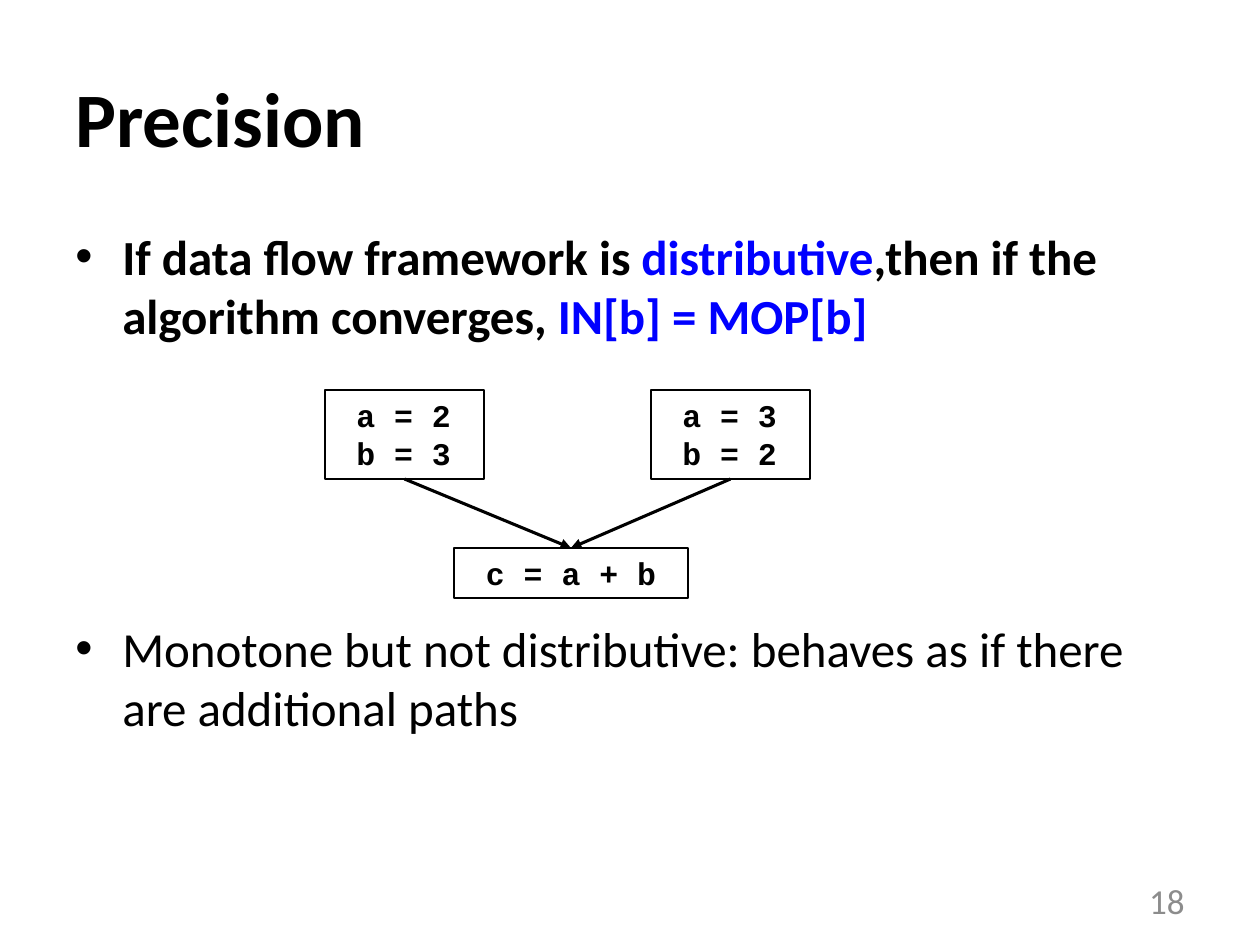
from dataclasses import dataclass

import lxml.etree
import pptx
import pptx.dml.color
import pptx.enum.shapes
import pptx.enum.text
import pptx.oxml.ns
import pptx.util

EMU_PER_PX = 914400 / 126
ALIGN = pptx.enum.text.PP_ALIGN
ANCHOR = pptx.enum.text.MSO_ANCHOR
BOTTOM, TOP = 2, 0


def rgb(code: str):
    return pptx.dml.color.RGBColor.from_string(code)


def px(length: int) -> pptx.util.Emu:
    return pptx.util.Emu(round(length * EMU_PER_PX))


@dataclass(frozen=True)
class Theme:
    text_font: str = "Calibri"
    code_font: str = "Courier New"
    ink: str = "000000"
    accent: str = "0000FF"
    muted: str = "8C8C8C"
    title_size: int = 44
    body_size: int = 28
    number_size: int = 20
    code_size: int = 18
    box_line: float = 1
    arrow_line: float = 1.75


THEME = Theme()


@dataclass(frozen=True)
class Area:
    left: int
    top: int
    width: int
    height: int

    def emu(self) -> list:
        return [px(n) for n in (self.left, self.top, self.width, self.height)]


@dataclass(frozen=True)
class Bullet:
    pieces: tuple  # (text, colour) pairs
    bold: bool
    space_before: int = 0


@dataclass(frozen=True)
class CodeBlock:
    area: Area
    lines: tuple
    align: ALIGN = ALIGN.LEFT


TITLE_AREA = Area(63, 38, 1134, 157)
BODY_AREA = Area(63, 220, 1134, 624)
NUMBER_AREA = Area(903, 876, 294, 50)
HANGING_INDENT = 47

BULLETS = (
    Bullet((("If data flow framework is ", THEME.ink),
            ("distributive", THEME.accent),
            (",then if the algorithm converges, ", THEME.ink),
            ("IN[b] = MOP[b]", THEME.accent)), bold=True),
    # The gap leaves room for the flow graph between the two bullets.
    Bullet((("Monotone but not distributive: behaves as if there "
             "are additional paths", THEME.ink),),
           bold=False, space_before=157),
)

BRANCHES = (
    CodeBlock(Area(325, 390, 159, 89), (" a = 2", " b = 3")),
    CodeBlock(Area(651, 390, 159, 89), (" a = 3", " b = 2")),
)
JOIN = CodeBlock(Area(454, 548, 234, 50), (" c = a + b ",), ALIGN.CENTER)


def style(font, name: str, size: int, color: str, bold: bool = False) -> None:
    font.name, font.size, font.bold = name, pptx.util.Pt(size), bold
    font.color.rgb = rgb(color)


def add_text_frame(slide, area: Area, anchor: ANCHOR):
    frame = slide.shapes.add_textbox(*area.emu()).text_frame
    frame.word_wrap = True
    frame.vertical_anchor = anchor
    return frame


def add_label(slide, area: Area, text: str, size: int, color: str,
              bold: bool = False, align: ALIGN = ALIGN.LEFT) -> None:
    label = add_text_frame(slide, area, ANCHOR.MIDDLE).paragraphs[0]
    label.text = text
    label.alignment = align
    style(label.font, THEME.text_font, size, color, bold)


def add_bullet_mark(paragraph) -> None:
    properties = paragraph._p.get_or_add_pPr()
    properties.set("marL", str(px(HANGING_INDENT)))
    properties.set("indent", str(-px(HANGING_INDENT)))
    ns = pptx.oxml.ns.qn
    lxml.etree.SubElement(properties, ns("a:buFont")).set("typeface", "Arial")
    lxml.etree.SubElement(properties, ns("a:buChar")).set("char", "•")


def add_bullets(slide, area: Area, bullets: tuple) -> None:
    frame = add_text_frame(slide, area, ANCHOR.TOP)
    for index, bullet in enumerate(bullets):
        paragraph = frame.add_paragraph() if index else frame.paragraphs[0]
        paragraph.space_before = pptx.util.Pt(bullet.space_before)
        add_bullet_mark(paragraph)
        for text, color in bullet.pieces:
            run = paragraph.add_run()
            run.text = text
            style(run.font, THEME.text_font, THEME.body_size, color, bullet.bold)


def add_code_block(slide, block: CodeBlock):
    box = slide.shapes.add_shape(
        pptx.enum.shapes.MSO_SHAPE.RECTANGLE, *block.area.emu())
    box.shadow.inherit = False
    box.fill.background()
    box.line.color.rgb = rgb(THEME.ink)
    box.line.width = pptx.util.Pt(THEME.box_line)
    frame = box.text_frame
    frame.word_wrap = True
    frame.vertical_anchor = ANCHOR.TOP
    frame.text = "\n".join(block.lines)
    for paragraph in frame.paragraphs:
        paragraph.alignment = block.align
        style(paragraph.font, THEME.code_font, THEME.code_size, THEME.ink, True)
    return box


def add_arrow(slide, source, target) -> None:
    """Join the bottom of source to the top of target."""
    arrow = slide.shapes.add_connector(
        pptx.enum.shapes.MSO_CONNECTOR.STRAIGHT, 0, 0, 0, 0)
    arrow.begin_connect(source, BOTTOM)
    arrow.end_connect(target, TOP)
    arrow.line.color.rgb = rgb(THEME.ink)
    arrow.line.width = pptx.util.Pt(THEME.arrow_line)
    ns = pptx.oxml.ns.qn
    head = lxml.etree.SubElement(arrow.line._get_or_add_ln(), ns("a:tailEnd"))
    head.set("type", "triangle")
    lxml.etree.SubElement(arrow._element.spPr, ns("a:effectLst"))


def main() -> None:
    deck = pptx.Presentation()
    deck.slide_width, deck.slide_height = px(1260), px(945)
    slide = deck.slides.add_slide(deck.slide_layouts[6])

    add_label(slide, TITLE_AREA, "Precision", THEME.title_size, THEME.ink, bold=True)
    add_bullets(slide, BODY_AREA, BULLETS)
    add_label(slide, NUMBER_AREA, "18", THEME.number_size, THEME.muted,
              align=ALIGN.RIGHT)

    branches = [add_code_block(slide, block) for block in BRANCHES]
    join = add_code_block(slide, JOIN)
    for branch in branches:
        add_arrow(slide, branch, join)

    deck.save("out.pptx")


if __name__ == "__main__":
    main()
